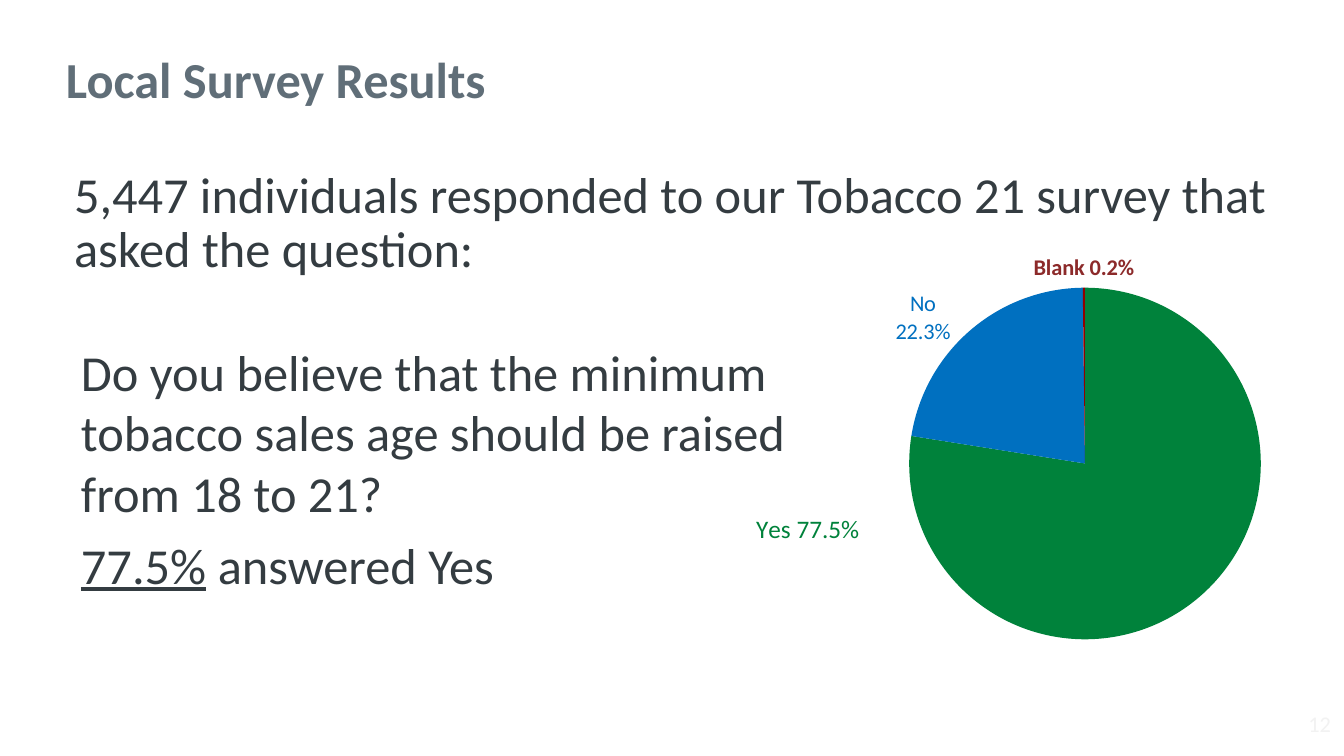
from lxml import etree
from pptx import Presentation
from pptx.chart.data import CategoryChartData
from pptx.dml.color import RGBColor
from pptx.enum.chart import XL_CHART_TYPE as ChartType, XL_LABEL_POSITION as LabelPos
from pptx.enum.text import MSO_ANCHOR as Anchor, PP_ALIGN as Align
from pptx.oxml import parse_xml
from pptx.oxml.ns import nsdecls, qn
from pptx.util import Emu, Pt

FONT, INK = "Calibri", "343C41"


def px(n):
    return Emu(round(n * 914400 / 100.8))


def style(font, size, color, bold=False):
    font.name, font.size, font.bold = FONT, Pt(size), bold
    font.color.rgb = RGBColor.from_string(color)


prs = Presentation()
prs.slide_width, prs.slide_height = px(1344), px(756)
slide = prs.slides.add_slide(prs.slide_layouts[6])

# Text: box, anchor, alignment, line spacing, insets, size, colour, bold, wording
texts = [
    ((56, 22, 1221, 120), Anchor.MIDDLE, Align.LEFT, 0.9, (10, 5), 36, "606E78", True,
     "Local Survey Results"),
    ((64, 165, 1221, 145), Anchor.TOP, Align.LEFT, 0.9, (10, 5), 36, INK, False,
     "5,447 individuals responded to our Tobacco 21 survey that asked the question:"),
    ((68, 334, 795, 325), Anchor.TOP, Align.LEFT, 1.0, (13, 7), 36, INK, False,
     "Do you believe that the minimum tobacco sales age should be raised from 18 to 21?"),
    ((1240, 704, 101, 40), Anchor.MIDDLE, Align.RIGHT, 1.0, (10, 5), 16, "F2F2F2", False,
     "12"),
]
frames = []
for box, anchor, align, spacing, (side, top), size, color, bold, words in texts:
    frame = slide.shapes.add_textbox(*map(px, box)).text_frame
    frame.word_wrap, frame.vertical_anchor = True, anchor
    frame.margin_left = frame.margin_right = px(side)
    frame.margin_top = frame.margin_bottom = px(top)
    frame.text = words
    frame.paragraphs[0].alignment = align
    frame.paragraphs[0].line_spacing = spacing
    style(frame.paragraphs[0].runs[0].font, size, color, bold)
    frames.append(frame)

# Answer below the question
answer = frames[2].add_paragraph()
answer.space_before = Pt(8)
for words, underlined in (("77.5%", True), (" answered Yes", False)):
    run = answer.add_run()
    run.text = words
    style(run.font, 36, INK)
    run.font.underline = underlined

# Pie of the answers
survey = CategoryChartData(number_format="0.0%")
survey.categories = ["Yes", "No", "Blank"]
survey.add_series("Series 1", (0.775, 0.223, 0.002))
chart = slide.shapes.add_chart(
    ChartType.PIE, *map(px, (601, 183, 784, 485)), survey).chart
chart.has_legend = chart.has_title = False
style(chart.font, 18, INK)
pie = chart.plots[0]
pie.vary_by_categories = True
answers = pie.series[0]
for i, color in enumerate(("00823B", "0070C0", "920000")):
    fill = answers.points[i].format.fill
    fill.solid()
    fill.fore_color.rgb = RGBColor.from_string(color)

# Fixed plot area
plot_layout = parse_xml(
    f'<c:layout {nsdecls("c")}><c:manualLayout><c:layoutTarget val="inner"/>'
    '<c:xMode val="edge"/><c:yMode val="edge"/><c:x val="0.366"/><c:y val="0.216"/>'
    '<c:w val="0.503"/><c:h val="0.725"/></c:manualLayout></c:layout>')
plot_area = pie._element.getparent()
for old in plot_area.findall(qn("c:layout")):
    plot_area.remove(old)
plot_area.insert(0, plot_layout)

# Category and value on each slice, without leader lines
labels = answers.data_labels
labels.show_category_name = labels.show_value = True
labels.show_percentage = False
labels.number_format, labels.number_format_is_linked = "0.0%", False
labels.position = LabelPos.OUTSIDE_END
style(labels.font, 16, "8C2A2A", True)
leader = labels._element.find(qn("c:showLeaderLines"))
leader.set("val", "0")
separator = etree.Element(qn("c:separator"))
separator.text = " "
leader.addprevious(separator)

# Moved labels: slice, lines, size, colour, shift as a share of the chart
for i, lines, size, color, dx, dy in (
        (0, "Yes 77.5%", 18, "00823B", -0.57, -0.18),
        (1, "No\n22.3%", 16, "0070C0", -0.02, 0.04)):
    label = answers.points[i].data_label
    label.text_frame.text = lines
    for paragraph in label.text_frame.paragraphs:
        style(paragraph.runs[0].font, size, color)
    label.position = LabelPos.OUTSIDE_END
    index = answers._element.find(f'.//{qn("c:dLbl")}/{qn("c:idx")}[@val="{i}"]')
    index.addnext(parse_xml(
        f'<c:layout {nsdecls("c")}><c:manualLayout><c:x val="{dx}"/><c:y val="{dy}"/>'
        '</c:manualLayout></c:layout>'))

prs.save("out.pptx")
